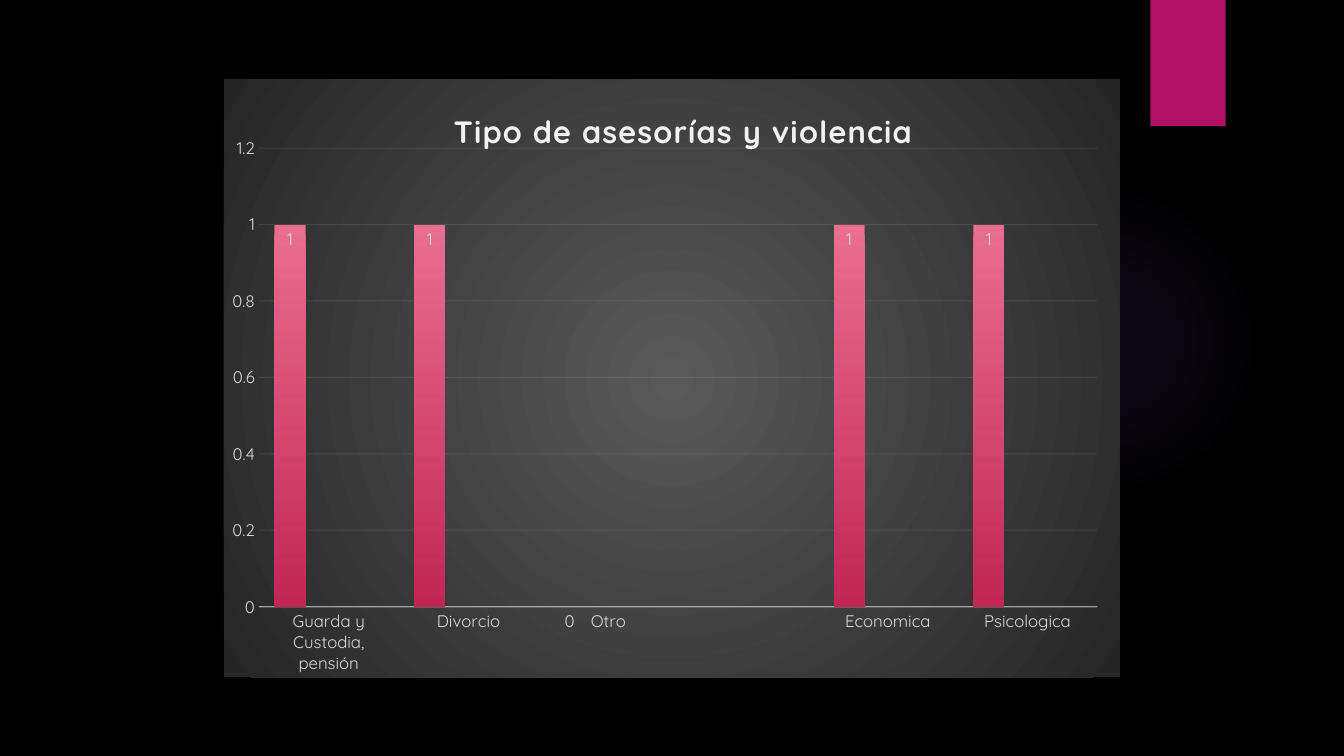
from dataclasses import dataclass

from lxml.etree import SubElement
from pptx import Presentation
from pptx.chart.data import CategoryChartData
from pptx.dml.color import RGBColor
from pptx.enum.chart import XL_CHART_TYPE, XL_LABEL_POSITION, XL_TICK_MARK
from pptx.enum.shapes import MSO_SHAPE
from pptx.oxml import parse_xml
from pptx.oxml.ns import nsdecls, qn
from pptx.util import Inches, Pt

FONT = "Quicksand"
COLORS = {
    "background": "000000", "glow": "9B6BF2", "tab": "B31166",
    "panel_in": "595959", "panel_out": "262626",
    "label": "D9D9D9", "light": "F2F2F2", "white": "FFFFFF",
    "pink_top": "E96E90", "pink_end": "C22655",
    "orange_top": "EEAD6D", "orange_end": "C97721",
    "violet_top": "DD6AD9", "violet_end": "AE2EAA",
}
CATEGORIES = ["Guarda y Custodia, pensión", "Divorcio", "Otro", "",
              "Economica", "Psicologica"]
CIRCLE = ('<a:path path="circle"><a:fillToRect l="50000" t="50000" '
          'r="50000" b="50000"/></a:path>')
DOWN = '<a:lin ang="5400000" scaled="0"/>'


@dataclass
class Box:
    """Position and size as shares of the slide."""
    x: float
    y: float
    w: float
    h: float

    def place(self, prs) -> tuple[int, int, int, int]:
        sw, sh = prs.slide_width, prs.slide_height
        return int(self.x * sw), int(self.y * sh), int(self.w * sw), int(self.h * sh)


@dataclass
class Stop:
    pos: int
    color: str
    alpha: int = 100


@dataclass
class Series:
    name: str
    values: list
    top: str
    end: str


@dataclass
class Decoration:
    kind: MSO_SHAPE
    box: Box
    color: str


GLOW = Decoration(MSO_SHAPE.OVAL, Box(0.706, 0.244, 0.231, 0.411), "glow")
TAB = Decoration(MSO_SHAPE.RECTANGLE, Box(0.856, 0, 0.056, 0.167), "tab")
CHART_BOX = Box(1 / 6, 0.105, 2 / 3, 0.791)
SERIES = [
    Series("Series 1", [1, 1, 0, None, 1, 1], "pink_top", "pink_end"),
    Series("Series 2", [None] * 6, "orange_top", "orange_end"),
    Series("Series 3", [None] * 6, "violet_top", "violet_end"),
]


def rgb(name: str) -> RGBColor:
    return RGBColor.from_string(COLORS[name])


def gradient(stops: list[Stop], direction: str):
    gs = "".join(
        f'<a:gs pos="{st.pos * 1000}"><a:srgbClr val="{COLORS[st.color]}">'
        f'<a:alpha val="{st.alpha * 1000}"/></a:srgbClr></a:gs>' for st in stops)
    return parse_xml(f'<a:gradFill {nsdecls("a")} rotWithShape="1">'
                     f'<a:gsLst>{gs}</a:gsLst>{direction}</a:gradFill>')


def replace_fill(sp_pr, grad) -> None:
    solid = sp_pr.find(qn("a:solidFill"))
    sp_pr.replace(solid, grad)


def style_font(font, size: float, color: str) -> None:
    font.name, font.size = FONT, Pt(size)
    font.color.rgb = rgb(color)


def style_line(owner, query: str, width: float, alpha: int) -> None:
    line = owner.format.line
    line.width = Pt(width)
    line.color.rgb = rgb("light")
    for clr in owner._element.xpath(query):
        SubElement(clr, qn("a:alpha")).set("val", str(alpha * 1000))


def layout(mode: str, **shares: float):
    target = '<c:layoutTarget val="inner"/>' if mode == "inner" else ""
    modes = "".join(f'<c:{k}Mode val="edge"/>' for k in "xy")
    sizes = "".join(f'<c:{k} val="{v}"/>' for k, v in shares.items())
    return parse_xml(f'<c:layout {nsdecls("c")}><c:manualLayout>'
                     f'{target}{modes}{sizes}</c:manualLayout></c:layout>')


def set_layout(parent, new, before: str) -> None:
    for old in parent.findall(qn("c:layout")):
        parent.remove(old)
    parent.find(qn(before)).addprevious(new)


def add_decoration(prs, s, item: Decoration):
    sp = s.shapes.add_shape(item.kind, *item.box.place(prs))
    sp.shadow.inherit = False
    sp.fill.solid()
    sp.fill.fore_color.rgb = rgb(item.color)
    sp.line.fill.background()
    return sp


def add_title(chart) -> None:
    chart.has_title = True
    tf = chart.chart_title.text_frame
    tf.text = "Tipo de asesorías y violencia"
    r = tf.paragraphs[0].runs[0]
    style_font(r.font, 22, "light")
    r.font.bold = True
    r.font._element.set("spc", "100")
    set_layout(chart.chart_title._element, layout("outer", x=0.25, y=0.04), "c:overlay")


def style_axes(chart) -> None:
    cat, val = chart.category_axis, chart.value_axis
    for axis in (cat, val):
        axis.major_tick_mark = axis.minor_tick_mark = XL_TICK_MARK.NONE
        style_font(axis.tick_labels.font, 12, "label")
    style_line(cat, "c:spPr/a:ln//a:srgbClr", 1, 54)
    val.minimum_scale, val.maximum_scale, val.major_unit = 0, 1.2, 0.2
    val.format.line.fill.background()
    val.has_major_gridlines = True
    grid = val.major_gridlines.format.line
    grid.width = Pt(0.75)
    grid.color.rgb = rgb("light")
    for clr in val._element.xpath("c:majorGridlines//a:srgbClr"):
        SubElement(clr, qn("a:alpha")).set("val", "10000")


def add_chart(prs, s) -> None:
    data = CategoryChartData()
    data.categories = CATEGORIES
    for item in SERIES:
        data.add_series(item.name, item.values)
    chart = s.shapes.add_chart(XL_CHART_TYPE.COLUMN_CLUSTERED,
                               *CHART_BOX.place(prs), data).chart
    style_font(chart.font, 10, "white")
    chart.has_legend = False
    add_title(chart)
    style_axes(chart)

    # Bars and their values
    plot = chart.plots[0]
    plot.gap_width, plot.overlap, plot.vary_by_categories = 100, -24, False
    for ser, item in zip(plot.series, SERIES):
        ser.format.fill.solid()
        replace_fill(ser._element.find(qn("c:spPr")),
                     gradient([Stop(0, item.top), Stop(100, item.end)], DOWN))
        labels = ser.data_labels
        labels.show_value = True
        labels.position = XL_LABEL_POSITION.INSIDE_END
        style_font(labels.font, 12, "label")

    # Plot area and panel
    space = chart._chartSpace
    area = space.find(qn("c:chart")).find(qn("c:plotArea"))
    set_layout(area, layout("inner", x=0.039, y=0.115, w=0.936, h=0.767), "c:barChart")
    panel = parse_xml(f'<c:spPr {nsdecls("c", "a")}><a:ln><a:noFill/></a:ln></c:spPr>')
    panel.insert(0, gradient([Stop(0, "panel_in"), Stop(100, "panel_out")], CIRCLE))
    space.find(qn("c:chart")).addnext(panel)


def main() -> None:
    prs = Presentation()
    prs.slide_width, prs.slide_height = Inches(13.33), Inches(7.5)
    s = prs.slides.add_slide(prs.slide_layouts[6])
    s.background.fill.solid()
    s.background.fill.fore_color.rgb = rgb("background")

    # Background glow
    glow = add_decoration(prs, s, GLOW)
    stops = [Stop(0, "glow", 7), Stop(36, "glow", 6), Stop(69, "glow", 0)]
    replace_fill(glow._element.spPr, gradient(stops, CIRCLE))

    # Corner tab with a soft shadow
    tab = add_decoration(prs, s, TAB)
    shadow = parse_xml(
        f'<a:outerShdw {nsdecls("a")} blurRad="{Pt(3)}" dist="{Pt(2)}" dir="5400000">'
        f'<a:srgbClr val="{COLORS["background"]}"><a:alpha val="45000"/></a:srgbClr>'
        '</a:outerShdw>')
    tab._element.spPr.find(qn("a:effectLst")).append(shadow)

    add_chart(prs, s)
    prs.save("out.pptx")


if __name__ == "__main__":
    main()
